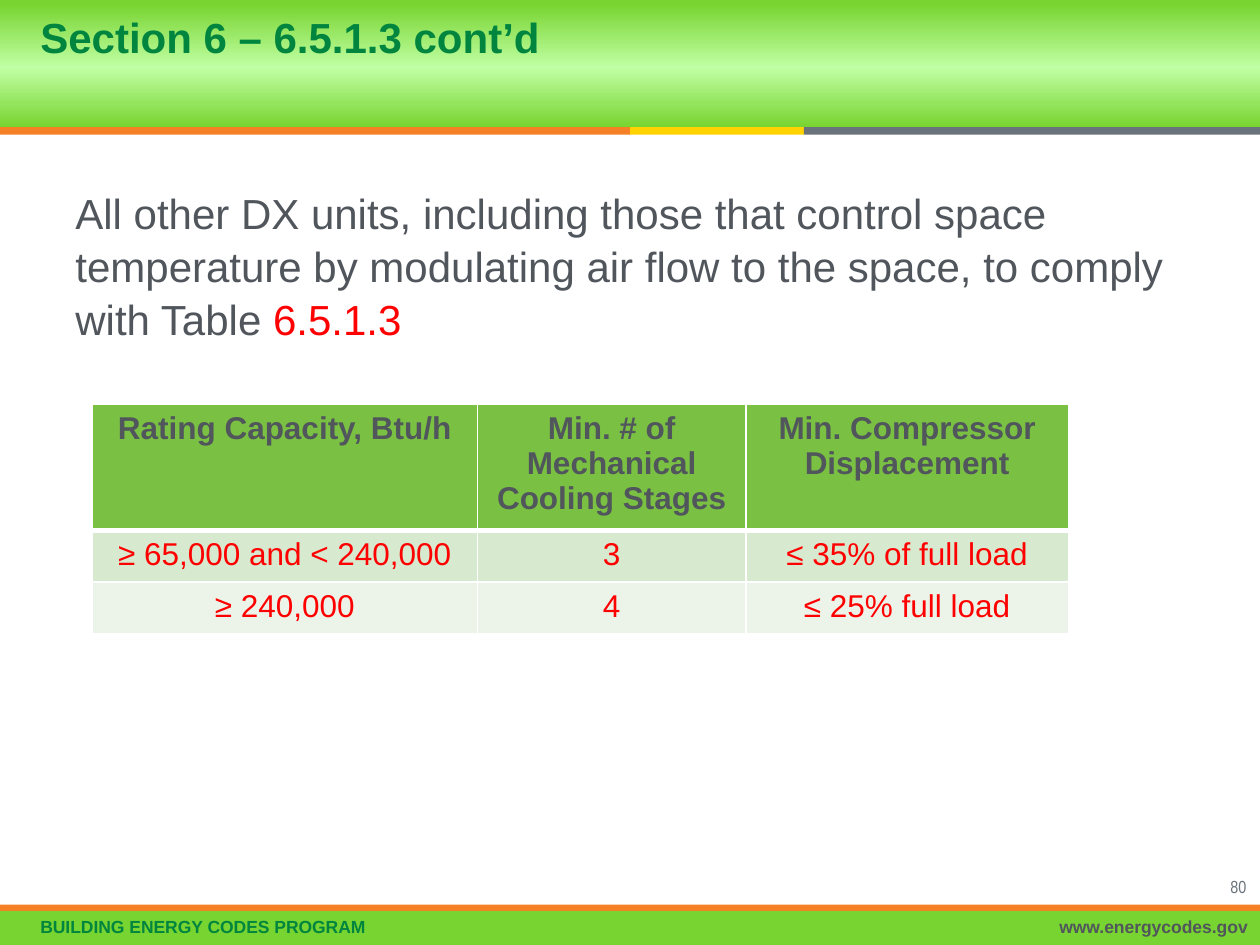
from copy import deepcopy
from lxml.etree import SubElement
from pptx import Presentation
from pptx.dml.color import RGBColor
from pptx.enum.shapes import MSO_SHAPE as Shape
from pptx.enum.text import MSO_ANCHOR as Anchor, PP_ALIGN as Align
from pptx.oxml.ns import qn
from pptx.util import Inches, Pt

GREEN = RGBColor(0x78, 0xD4, 0x30)
PALE_GREEN = RGBColor(0xC0, 0xFF, 0xA4)
DARK_GREEN = RGBColor(0x00, 0x85, 0x3F)
ORANGE = RGBColor(0xF5, 0x80, 0x25)
YELLOW = RGBColor(0xFF, 0xD2, 0x00)
GRAY = RGBColor(0x6A, 0x73, 0x7B)
INK = RGBColor(0x50, 0x56, 0x5C)
RED = RGBColor(0xFF, 0x00, 0x00)
ROW_FILLS = [RGBColor(0x7A, 0xC1, 0x43), RGBColor(0xD7, 0xE9, 0xCF), RGBColor(0xEC, 0xF4, 0xE9)]

WIDTH, HEIGHT = 10, 7.5
BAND_H, STRIPE_H, FOOTER_H = 1.01, 0.06, 0.27
FOOTER_TOP = HEIGHT - FOOTER_H

TITLE = "Section 6 – 6.5.1.3 cont’d"
INTRO = [
    ("All other DX units, including those that control space temperature by "
     "modulating air flow to the space, to comply with Table ", INK),
    ("6.5.1.3", RED),
]
STRIPES = [(5, ORANGE), (1.38, YELLOW), (3.62, GRAY)]
LIMITS = [
    ("Rating Capacity, Btu/h", "Min. # of Mechanical Cooling Stages", "Min. Compressor Displacement"),
    ("≥ 65,000 and < 240,000", "3", "≤ 35% of full load"),
    ("≥ 240,000", "4", "≤ 25% full load"),
]
COLUMNS = [3.06, 2.13, 2.56]
ROWS = [0.92, 0.41, 0.41]


def style(font, size, color, bold=False, face="Arial"):
    font.name, font.size, font.bold = face, Pt(size), bold
    font.color.rgb = color


def add_bar(slide, left, top, width, height, color):
    bar = slide.shapes.add_shape(Shape.RECTANGLE, *map(Inches, (left, top, width, height)))
    bar.shadow.inherit = False
    bar.line.fill.background()
    bar.fill.solid()
    bar.fill.fore_color.rgb = color
    return bar


def add_text(slide, box, runs, size, align=Align.LEFT, spacing=1.0, bold=False, face="Arial"):
    frame = slide.shapes.add_textbox(*map(Inches, box)).text_frame
    frame.word_wrap = True
    line = frame.paragraphs[0]
    line.alignment, line.line_spacing = align, spacing
    for words, color in runs:
        run = line.add_run()
        run.text = words
        style(run.font, size, color, bold, face)
    return frame


def add_band(slide):
    band = add_bar(slide, 0, 0, WIDTH, BAND_H, GREEN)
    band.fill.gradient()
    band.fill.gradient_angle = 90
    stop_list = next(band._element.iter(qn("a:gsLst")))
    stop_list.append(deepcopy(stop_list[-1]))
    stops = [(0, GREEN), (0.47, PALE_GREEN), (0.97, GREEN)]
    for stop, (position, color) in zip(band.fill.gradient_stops, stops):
        stop.position = position
        stop.color.rgb = color


def set_borders(cell, bottom):
    props = cell._tc.get_or_add_tcPr()
    for index, (side, points) in enumerate([("L", 1), ("R", 1), ("T", 1), ("B", bottom)]):
        border = SubElement(props, qn(f"a:ln{side}"), w=str(Pt(points)))
        SubElement(SubElement(border, qn("a:solidFill")), qn("a:srgbClr"), val="FFFFFF")
        props.insert(index, border)


def add_limits(slide):
    box = map(Inches, (0.73, 3.21, sum(COLUMNS), sum(ROWS)))
    table = slide.shapes.add_table(len(ROWS), len(COLUMNS), *box).table
    for column, width in zip(table.columns, COLUMNS):
        column.width = Inches(width)
    for r, (values, height, fill) in enumerate(zip(LIMITS, ROWS, ROW_FILLS)):
        header = r == 0
        table.rows[r].height = Inches(height)
        for c, value in enumerate(values):
            cell = table.cell(r, c)
            cell.text = value
            cell.fill.solid()
            cell.fill.fore_color.rgb = fill
            line = cell.text_frame.paragraphs[0]
            line.alignment = Align.CENTER
            style(line.runs[0].font, 18, INK if header else RED, header)
            set_borders(cell, 3 if header else 1)
            if r == 1:
                set_top = cell._tc.tcPr.find(qn("a:lnT"))
                set_top.set("w", str(Pt(3)))


def place_title(slide):
    title = slide.shapes.title
    title.left, title.top, title.width, title.height = map(Inches, (0.22, 0, 9.75, 1))
    frame = title.text_frame
    frame.text = TITLE
    frame.vertical_anchor = Anchor.MIDDLE
    frame.margin_bottom = Inches(0.39)
    line = frame.paragraphs[0]
    line.alignment, line.line_spacing = Align.LEFT, 0.8
    style(line.runs[0].font, 24, DARK_GREEN, True)
    slide.shapes._spTree.append(title._element)


def main():
    deck = Presentation()
    deck.slide_width, deck.slide_height = Inches(WIDTH), Inches(HEIGHT)
    slide = deck.slides.add_slide(deck.slide_layouts[5])

    add_band(slide)
    left = 0
    for width, color in STRIPES:
        add_bar(slide, left, BAND_H, width, STRIPE_H, color)
        left += width
    add_bar(slide, 0, FOOTER_TOP, WIDTH, FOOTER_H, GREEN)
    add_bar(slide, 0, FOOTER_TOP - 0.05, WIDTH, 0.05, ORANGE)

    program = add_text(slide, (0.07, 7.24, 5.9, 0.26), [("BUILDING ENERGY CODES PROGRAM", DARK_GREEN)],
                       10, spacing=0.9, bold=True)
    program.margin_left = Inches(0.25)
    add_text(slide, (5.99, 7.24, 4.01, 0.26), [("www.energycodes.gov", INK)],
             10, Align.RIGHT, 0.9, True)
    add_text(slide, (9.28, 6.9, 0.71, 0.18), [("80", GRAY)], 10, Align.RIGHT, face="Arial Narrow")

    add_text(slide, (0.5, 1.42, 8.92, 1.5), INTRO, 24, spacing=1.05)
    add_limits(slide)
    place_title(slide)
    deck.save("out.pptx")


if __name__ == "__main__":
    main()
